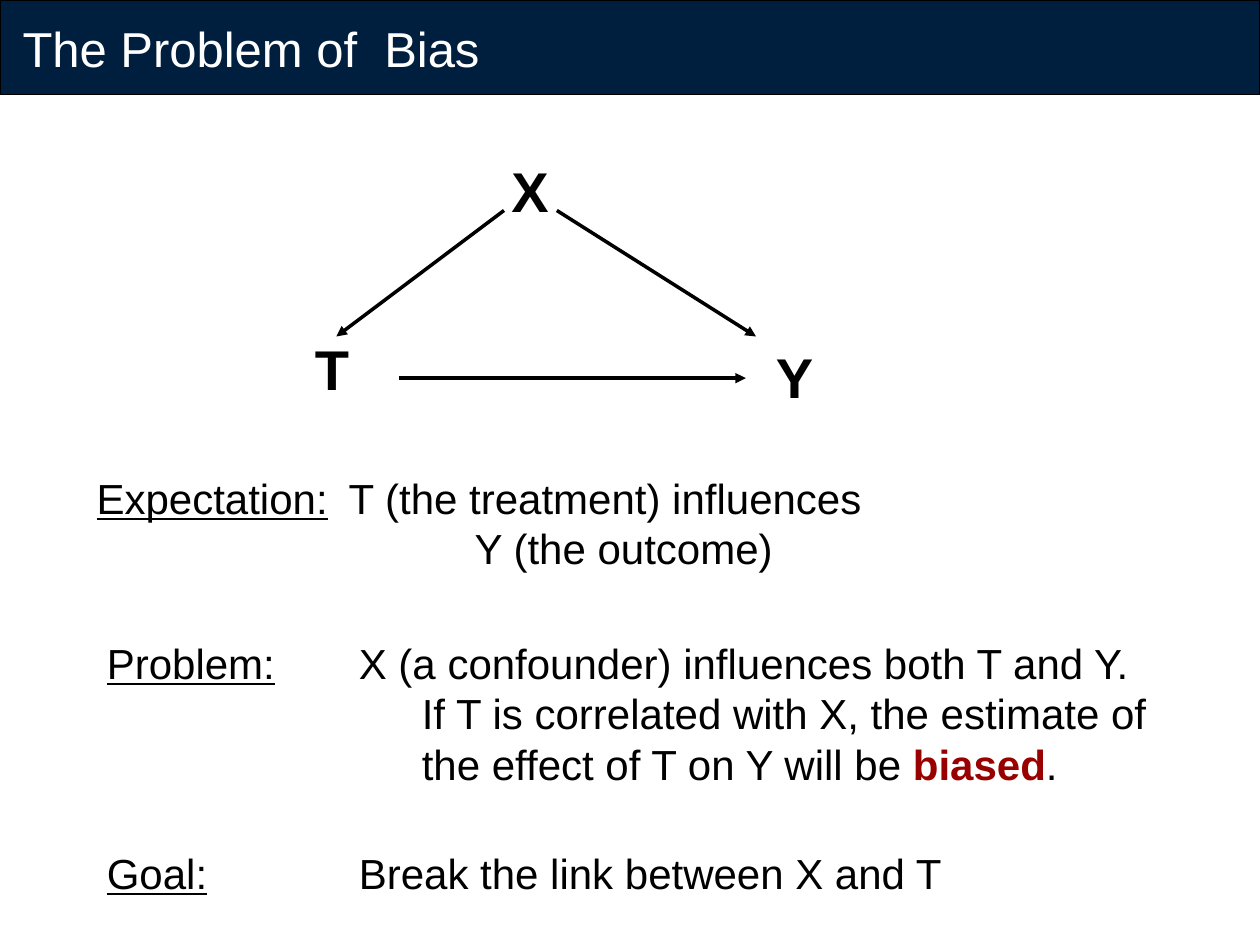
import pptx
import pptx.util
import pptx.dml.color
import pptx.enum.shapes
import pptx.enum.text
import pptx.oxml.ns
from lxml import etree

Pt = pptx.util.Pt
qn = pptx.oxml.ns.qn


def color(value):
    return pptx.dml.color.RGBColor.from_string(value)


def add_span(para, text, size=24, fill="000000", bold=False, underline=False):
    span = para.add_run()
    span.text = text
    span.font.name = "Arial"
    span.font.size = Pt(size)
    span.font.bold = bold
    span.font.underline = underline
    span.font.color.rgb = color(fill)


def add_text(page, left, top, width, height, text=None, wrap=False, **style):
    box = page.shapes.add_textbox(Pt(left), Pt(top), Pt(width), Pt(height))
    frame = box.text_frame
    frame.word_wrap = wrap
    if not wrap:
        frame.auto_size = pptx.enum.text.MSO_AUTO_SIZE.SHAPE_TO_FIT_TEXT
    if text:
        add_span(frame.paragraphs[0], text, **style)
    return frame


def add_entry(para, label, lines, stops, before=0):
    """Underlined label, then lines aligned on tab stops; a line is a list of (text, style)."""
    tabs = etree.SubElement(para._p.get_or_add_pPr(), qn("a:tabLst"))
    for stop in stops:
        etree.SubElement(tabs, qn("a:tab"), pos=str(Pt(stop)), algn="l")
    para.line_spacing = Pt(28.8)
    if before:
        para.space_before = Pt(before)
    add_span(para, label, underline=True)
    for number, line in enumerate(lines):
        if number:
            para.add_line_break()
        add_span(para, "\t\t" if number else "\t")
        for text, style in line:
            add_span(para, text, **style)


def add_arrow(page, start, end):
    arrow = page.shapes.add_connector(
        pptx.enum.shapes.MSO_CONNECTOR.STRAIGHT, *map(Pt, start + end))
    arrow.line.color.rgb = color("000000")
    arrow.line.width = Pt(2)
    etree.SubElement(arrow.line._get_or_add_ln(), qn("a:tailEnd"), type="triangle")
    etree.SubElement(arrow._element.spPr, qn("a:effectLst"))


def add_header(page, left, top, width, height):
    bar = page.shapes.add_shape(pptx.enum.shapes.MSO_SHAPE.RECTANGLE,
                                Pt(left), Pt(top), Pt(width), Pt(height))
    bar.shadow.inherit = False
    bar.fill.solid()
    bar.fill.fore_color.rgb = color("001F3E")
    bar.line.color.rgb = color("000000")
    bar.line.width = Pt(0.75)
    add_text(page, left + 5.8, top + 7.2, 286.6, 41, "The Problem of  Bias",
             size=28, fill="FFFFFF")


def add_diagram(page, left, top):
    # Arrows from the confounder and the treatment
    for start, end in [((145.4, 34.6), (259.2, 106.6)),
                       ((55.4, 130.4), (253.4, 130.4)),
                       ((115.2, 34.6), (19.4, 106.6))]:
        add_arrow(page, (left + start[0], top + start[1]),
                  (left + end[0], top + end[1]))
    # Variables
    for name, x, y, width in [("T", 0, 102.2, 33.8), ("Y", 263.5, 106.6, 36),
                              ("X", 112.3, 0, 36)]:
        add_text(page, left + x, top + y, width, 45.4, name, size=32, bold=True)


def add_explanation(page, left, top, width):
    # Expectation
    frame = add_text(page, left, top, width, 94.3, wrap=True)
    add_entry(frame.paragraphs[0], "Expectation:",
              [[("T (the treatment) influences", {})], [("Y (the outcome)", {})]],
              (144, 216))
    # Problem and goal
    frame = add_text(page, left + 5.8, top + 94.3, width - 26, 179, wrap=True)
    add_entry(frame.paragraphs[0], "Problem:",
              [[("X (a confounder) influences both T and Y.", {})],
               [("If T is correlated with X, the estimate of", {})],
               [("the effect of T on Y will be ", {}),
                ("biased", {"fill": "990000", "bold": True}), (".", {})]],
              (144, 180))
    add_entry(frame.add_paragraph(), "Goal:",
              [[("Break the link between X and T", {})]], (144,), before=33.6)


def main():
    deck = pptx.Presentation()
    deck.slide_width, deck.slide_height = Pt(720), Pt(540)
    page = deck.slides.add_slide(deck.slide_layouts[6])
    add_header(page, 0, 0, 720, 54)
    add_diagram(page, 172.8, 85.7)
    add_explanation(page, 48.2, 266.4, 671.8)
    deck.save("out.pptx")


if __name__ == "__main__":
    main()
